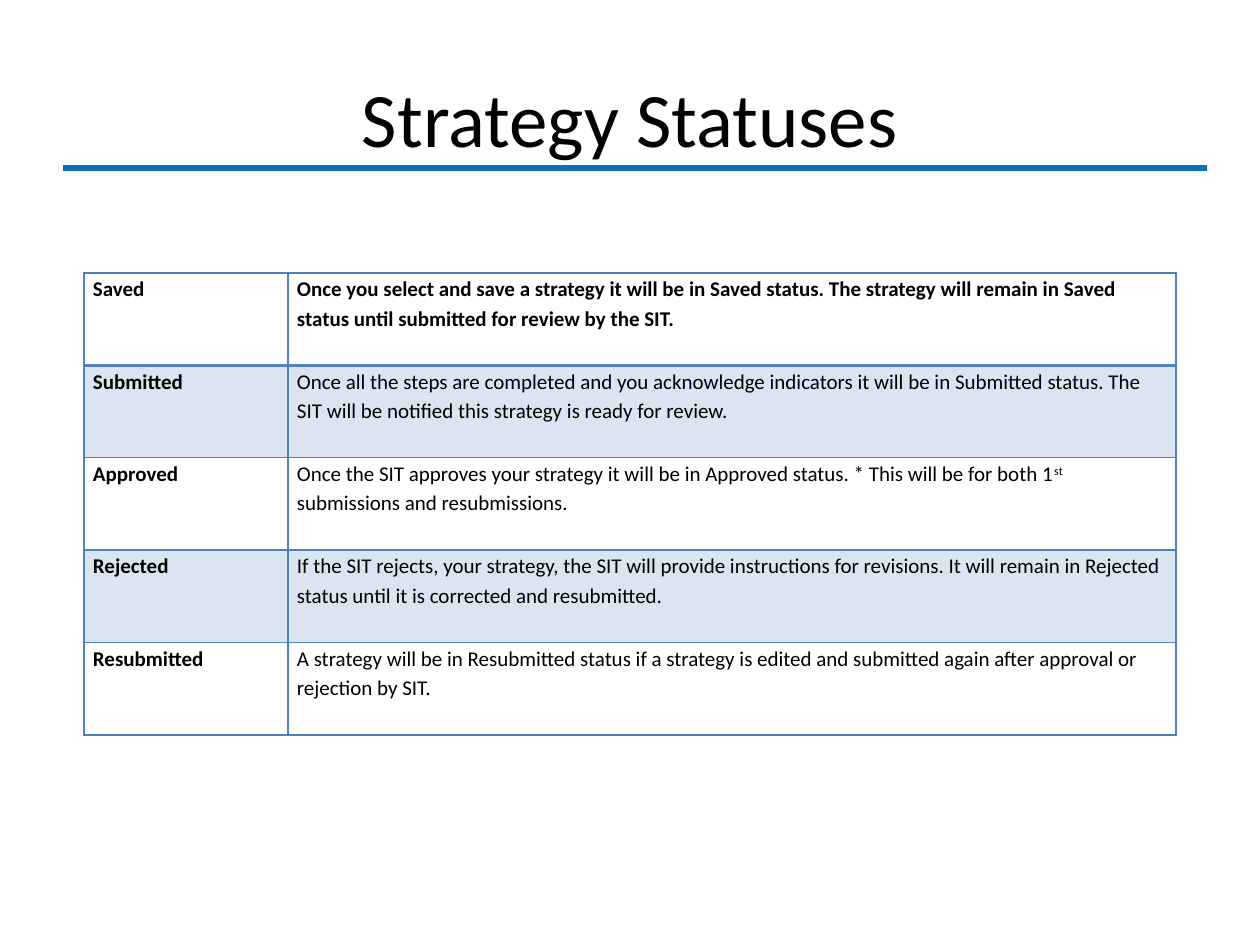
from typing import NamedTuple

from lxml.etree import SubElement
from pptx import Presentation
from pptx.dml.color import RGBColor
from pptx.enum.shapes import MSO_CONNECTOR
from pptx.enum.text import MSO_ANCHOR, PP_ALIGN
from pptx.oxml import parse_xml
from pptx.oxml.ns import nsdecls, qn
from pptx.util import Emu, Pt

EMU_PER_PX = 914400 / 126
FONT = "Calibri"
COLORS = {"text": "000000", "rule": "0772BA", "table": "4F81BD"}
BAND_ALPHA = 20


class Status(NamedTuple):
    name: str
    description: str
    ordinal: str = ""
    remainder: str = ""


STATUSES = [
    Status("Saved", "Once you select and save a strategy it will be in Saved status. "
           "The strategy will remain in Saved status until submitted for review by the SIT."),
    Status("Submitted", "Once all the steps are completed and you acknowledge indicators "
           "it will be in Submitted status. The SIT will be notified this strategy is "
           "ready for review."),
    Status("Approved", "Once the SIT approves your strategy it will be in Approved status. "
           "* This will be for both 1", "st", " submissions and resubmissions."),
    Status("Rejected", "If the SIT rejects, your strategy, the SIT will provide instructions "
           "for revisions. It will remain in Rejected status until it is corrected and "
           "resubmitted."),
    Status("Resubmitted", "A strategy will be in Resubmitted status if a strategy is edited "
           "and submitted again after approval or rejection by SIT."),
]


def px(length: int) -> Emu:
    return Emu(round(length * EMU_PER_PX))


def add_run(paragraph, text: str, *, size: int, bold: bool = False, baseline: int = 0) -> None:
    run = paragraph.add_run()
    run.text = text
    font = run.font
    font.name, font.size, font.bold = FONT, Pt(size), bold
    font.color.rgb = RGBColor.from_string(COLORS["text"])
    if baseline:
        run._r.get_or_add_rPr().set("baseline", str(baseline * 1000))


def add_title(slide, text: str) -> None:
    shape = slide.shapes.add_textbox(px(63), px(38), px(1134), px(158))
    frame = shape.text_frame
    frame.word_wrap = True
    frame.vertical_anchor = MSO_ANCHOR.MIDDLE
    paragraph = frame.paragraphs[0]
    paragraph.alignment = PP_ALIGN.CENTER
    add_run(paragraph, text, size=44)


def add_rule(slide) -> None:
    rule = slide.shapes.add_connector(
        MSO_CONNECTOR.STRAIGHT, px(63), px(168), px(1207), px(168))
    rule.line.color.rgb = RGBColor.from_string(COLORS["rule"])
    rule.line.width = Pt(3)
    SubElement(rule._element.spPr, qn("a:effectLst"))


def set_fill(cell, banded: bool) -> None:
    if not banded:
        cell.fill.background()
        return
    cell.fill.solid()
    cell.fill.fore_color.rgb = RGBColor.from_string(COLORS["table"])
    color = cell._tc.tcPr.find(f"{qn('a:solidFill')}/{qn('a:srgbClr')}")
    SubElement(color, qn("a:alpha")).set("val", str(BAND_ALPHA * 1000))


def set_borders(cell, *, top: int = 1, bottom: int = 1) -> None:
    """Draw the four cell borders, ahead of the fill as the schema requires."""
    widths = {"lnL": 1, "lnR": 1, "lnT": top, "lnB": bottom}
    for index, (side, width) in enumerate(widths.items()):
        border = parse_xml(
            f'<a:{side} {nsdecls("a")} w="{Pt(width)}"><a:solidFill>'
            f'<a:srgbClr val="{COLORS["table"]}"/></a:solidFill></a:{side}>')
        cell._tc.get_or_add_tcPr().insert(index, border)


def format_cell(cell, row: int):
    """Style a cell and return its paragraph, ready for text."""
    cell.margin_left = cell.margin_right = px(9)
    cell.margin_top = cell.margin_bottom = 0
    cell.vertical_anchor = MSO_ANCHOR.TOP
    set_fill(cell, banded=row % 2 == 1)
    set_borders(cell, top=2 if row == 1 else 1, bottom=2 if row == 0 else 1)
    paragraph = cell.text_frame.paragraphs[0]
    paragraph.line_spacing = 1.15
    return paragraph


def add_status_table(slide, statuses: list[Status]) -> None:
    height = px(462)
    table = slide.shapes.add_table(
        len(statuses), 2, px(84), px(273), px(1092), height).table
    table.first_row = table.horz_banding = False
    for column, width in zip(table.columns, (204, 888)):
        column.width = px(width)
    for index, status in enumerate(statuses):
        table.rows[index].height = Emu(height // len(statuses))
        name, description = (format_cell(table.cell(index, column), index)
                             for column in range(2))
        add_run(name, status.name, size=12, bold=True)
        add_run(description, status.description, size=12, bold=index == 0)
        if status.ordinal:
            add_run(description, status.ordinal, size=12, baseline=30)
            add_run(description, status.remainder, size=12)


def main() -> None:
    presentation = Presentation()
    presentation.slide_width, presentation.slide_height = px(1260), px(945)
    slide = presentation.slides.add_slide(presentation.slide_layouts[6])
    add_rule(slide)
    add_title(slide, "Strategy Statuses")
    add_status_table(slide, STATUSES)
    presentation.save("out.pptx")


if __name__ == "__main__":
    main()
